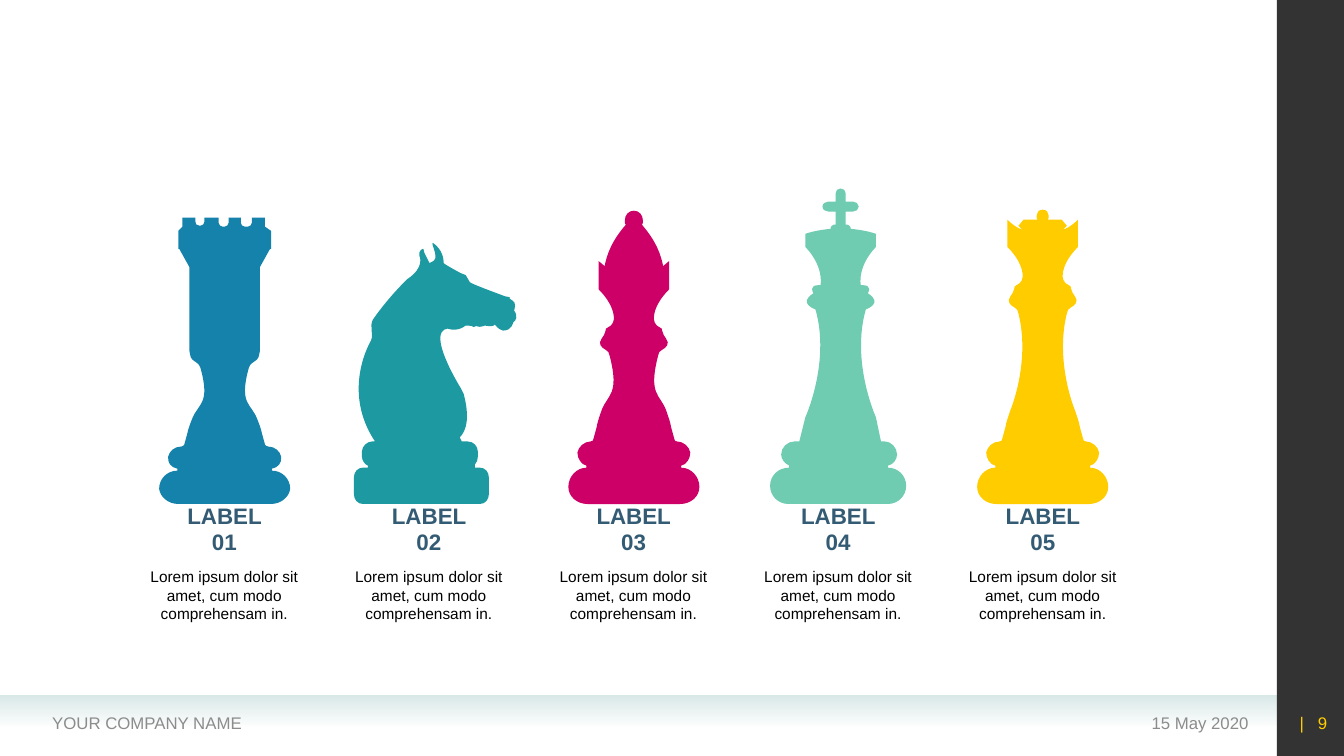
import lxml.etree
import pptx
import pptx.dml.color
import pptx.enum.shapes
import pptx.enum.text
import pptx.util

Pt = pptx.util.Pt
ALIGN = pptx.enum.text.PP_ALIGN
ANCHOR = pptx.enum.text.MSO_ANCHOR
RECT = pptx.enum.shapes.MSO_SHAPE.RECTANGLE
NS = "{http://schemas.openxmlformats.org/drawingml/2006/main}"
UNIT = 0.72  # points per step of the outlines below

# Outlines hold (distance from axis, height above base): a pair is a corner,
# six numbers are a cubic curve. Half outlines run from the top to the base.
FOOT = [(34, 87, 36, 82, 37, 76), (40, 65), (40, 63, 41, 62, 43, 62),
        (49, 62, 55, 57, 56, 51), (56, 45, 52, 39, 47, 38), (47, 36),
        (57, 36, 65, 27, 65, 17), (65, 7, 56, 0, 46, 0)]
COLLAR = [(35, 213), (25, 203, 21, 194, 20, 187), (19, 182, 21, 177, 26, 175),
          (28, 175, 28, 173, 28, 172), (29, 169, 30, 166, 32, 164),
          (36, 159, 32, 155, 28, 153), (26, 152, 24, 150, 24, 147)]
BISHOP = [(0, 291), (5, 291, 9, 287, 9, 281), (9, 279, 9, 278, 8, 277),
          (22, 261, 27, 247, 29, 236), (31, 238, 33, 239, 35, 241),
          *COLLAR, (14, 108, 26, 109, 32, 93), *FOOT]
RAISED = [tuple(v + 42 * (i % 2) for i, v in enumerate(part)) for part in COLLAR]
QUEEN = [(0, 292), (4, 292, 6, 289, 6, 286), (6, 284, 6, 283, 5, 282),
         (19, 282), (24, 276), (19, 271), (20, 272), (26, 274, 31, 278, 35, 282),
         *RAISED, (14, 149, 26, 108, 32, 93), *FOOT]
CROSS = [(0, 313), (3, 313, 5, 311, 5, 308), (5, 300), (12, 300),
         (15, 300, 18, 298, 18, 295), (18, 292, 15, 290, 12, 290), (5, 290),
         (5, 277), (7, 277), (8, 277, 10, 275, 10, 274), (10, 273),
         (18, 272, 26, 271, 35, 268), (35, 255), (16, 235, 20, 217, 20, 217),
         (33, 218, 27, 209, 27, 209), (43, 199, 25, 193, 25, 193),
         (10, 141, 35, 86, 35, 86)]
KING_R = CROSS + [(40, 62), (44, 62), (50, 62, 56, 56, 56, 49),
                  (56, 44, 52, 39, 47, 38), (47, 36),
                  (57, 36, 65, 28, 65, 18), (65, 8, 57, 0, 47, 0)]
KING_L = CROSS + [(41, 62), (46, 62), (53, 62, 59, 56, 59, 49),
                  (59, 44, 55, 40, 51, 38), (51, 36),
                  (62, 36, 70, 28, 70, 18), (70, 8, 62, 0, 52, 0)]
TOWER = [(46, 271), (46, 253), (45, 253), (35, 235), (35, 152),
         (35, 150, 35, 149, 34, 147), (34, 145, 31, 142, 29, 141),
         (26, 139, 24, 137, 24, 135), (14, 99, 26, 100, 32, 85),
         (34, 80, 36, 75, 37, 70), (40, 59), (40, 58, 42, 57, 43, 57),
         (50, 57, 55, 52, 56, 47), (57, 41, 53, 36, 47, 35), (47, 33),
         (57, 33, 65, 25, 65, 15), (64, 7, 56, 0, 46, 0)]
ROOK_R = [(0, 275), (2, 275, 4, 277, 4, 279), (4, 284), (16, 284), (16, 279),
          (16, 277, 18, 275, 20, 275), (23, 275), (25, 275, 27, 277, 27, 279),
          (27, 284), (40, 284), (40, 275), *TOWER]
ROOK_L = [(0, 275), (2, 275), (4, 275, 6, 277, 6, 279), (6, 284), (20, 284),
          (20, 280), (20, 278, 22, 276, 24, 276), (25, 276),
          (28, 276, 29, 278, 29, 280), (29, 284), (42, 284), (42, 275), *TOWER]
KNIGHT = [(-65, 36), (-60, 36), (-60, 38), (-63, 39, -66, 43, -66, 47), (-66, 52),
          (-66, 57, -61, 62, -56, 62), (-53, 62), (-87, 113, -57, 162, -57, 162),
          (-54, 169, -59, 176, -55, 183), (-39, 206, -21, 223, -21, 223),
          (-3, 235, -9, 246, -9, 246), (-10, 253, -5, 253, -5, 253),
          (-4, 249), (1, 239), (5, 241), (12, 245, -2, 265, 7, 257),
          (16, 249, 15, 239, 15, 239), (17, 237, 32, 229, 32, 229),
          (37, 227), (41, 220), (43, 218, 76, 206, 76, 206), (81, 205),
          (81, 205, 78, 205, 83, 202), (88, 200, 85, 192, 85, 192),
          (89, 186, 87, 182, 84, 180), (84, 180, 83, 172, 74, 172),
          (69, 173, 66, 178, 66, 178), (65, 175, 56, 177, 56, 177),
          (56, 177, 51, 175, 49, 176), (47, 178, 45, 174, 44, 176),
          (43, 177, 37, 177, 37, 177), (28, 170, 19, 174, 19, 174),
          (-3, 171, 32, 115, 32, 115), (35, 109), (41, 86, 38, 73, 31, 66),
          (33, 62), (39, 62), (45, 62, 49, 57, 49, 52), (49, 47),
          (49, 44, 48, 41, 46, 39), (46, 36), (51, 36), (56, 36, 60, 32, 60, 26),
          (60, 10), (60, 4, 56, 0, 51, 0), (-65, 0), (-70, 0, -74, 4, -74, 10),
          (-74, 26), (-74, 32, -70, 36, -65, 36)]


def tint(code):
    return pptx.dml.color.RGBColor.from_string(code)


def fade(color, share):
    """Add an opacity in percent to a colour element."""
    lxml.etree.SubElement(color, NS + "alpha", val=str(share * 1000))


def join(right, left):
    """Close two half outlines around their axis, the left one run backwards."""
    flip = [tuple(-v if i % 2 == 0 else v for i, v in enumerate(part)) for part in left]
    back = [part[2:4] + part[:2] + prior[-2:] if len(part) == 6 else prior[-2:]
            for prior, part in zip(flip, flip[1:])]
    return right + [flip[-1][-2:]] + back[::-1]


def piece(slide, axis, base, outline, color):
    """Draw an outline, bending each side that has two control points."""
    def spot(x, y):
        return Pt(axis + x * UNIT), Pt(base - y * UNIT)

    ends = [spot(*part[-2:]) for part in outline]
    maker = slide.shapes.build_freeform(*ends[0], scale=1.0)
    maker.add_line_segments(ends[1:], close=True)
    shape = maker.convert_to_shape()
    sides = list(shape._element.spPr.iter(NS + "lnTo"))
    for side, part in zip(sides, outline[1:]):
        if len(part) == 6:
            side.tag = NS + "cubicBezTo"
            for n in (0, 1):
                x, y = spot(*part[2 * n:2 * n + 2])
                dot = lxml.etree.Element(NS + "pt", x=str(x - shape.left), y=str(y - shape.top))
                side.insert(n, dot)
    shape.shadow.inherit = False
    shape.fill.solid()
    shape.fill.fore_color.rgb = tint(color)
    shape.line.fill.background()


def label(slide, box, runs, size, color, align=ALIGN.LEFT, anchor=ANCHOR.MIDDLE,
          bold=False, inset=(7.2, 3.6)):
    area = slide.shapes.add_textbox(*map(Pt, box))
    frame = area.text_frame
    frame.word_wrap = True
    frame.vertical_anchor = anchor
    frame.margin_left = frame.margin_right = Pt(inset[0])
    frame.margin_top = frame.margin_bottom = Pt(inset[1])
    line = frame.paragraphs[0]
    line.alignment = align
    for text, gap in runs:
        run = line.add_run()
        run.text = text
        run.font.name, run.font.size, run.font.bold = "Arial", Pt(size), bold
        run.font.color.rgb = tint(color)
        if gap:
            run._r.get_or_add_rPr().set("spc", str(gap))


def panel(slide, box):
    shape = slide.shapes.add_shape(RECT, *map(Pt, box))
    shape.shadow.inherit = False
    shape.line.fill.background()
    return shape


def frame(slide, wide, high):
    """Draw the footer band, the side bar and their texts."""
    side = wide - 48
    band = panel(slide, (0, 496.8, side, 22.3))
    band.fill.gradient()
    band.fill.gradient_angle = 270
    for stop in band.fill.gradient_stops:
        stop.color.rgb = tint("D9E9E8")
    fade(list(band._element.spPr.iter(NS + "srgbClr"))[-1], 0)
    bar = panel(slide, (side, 0, 48, high))
    bar.fill.solid()
    bar.fill.fore_color.rgb = tint("000000")
    fade(next(bar._element.spPr.iter(NS + "srgbClr")), 80)
    top, tall = high - 38.2, 28.8
    label(slide, (side - 257, top, 244, tall), [("15 May 2020", 0)], 12, "8C8C8C", ALIGN.RIGHT)
    label(slide, (30.2, top, 353, tall), [("YOUR COMPANY NAME", 0)], 12, "8C8C8C")
    label(slide, (side - 5, top, 48, tall), [("| ", 330), ("9", 0)], 12, "FFCC00", ALIGN.RIGHT)


def column(slide, left, base, wide, number, outline, shift, color):
    mid = left + wide / 2
    piece(slide, mid + shift, base, outline, color)
    label(slide, (mid - 41, base + 13.7, 82, 26.6), [(f"LABEL {number:02}", 0)], 16,
          "335B74", ALIGN.CENTER, ANCHOR.BOTTOM, True)
    label(slide, (left, base + 44, wide, 43.2),
          [("Lorem ipsum dolor sit amet, cum modo comprehensam in.", 0)], 11,
          "000000", ALIGN.CENTER, ANCHOR.TOP, inset=(2.9, 1.4))


def main():
    deck = pptx.Presentation()
    deck.slide_width, deck.slide_height = Pt(960), Pt(540)
    slide = deck.slides.add_slide(deck.slide_layouts[6])
    frame(slide, 960, 540)
    chess = [(join(ROOK_R, ROOK_L), 0.3, "1482AB"),
             (KNIGHT, -0.3, "1D9AA1"),
             (join(BISHOP, BISHOP), 0.3, "CC0066"),
             (join(KING_R, KING_L), 1.8, "70CCB1"),
             (join(QUEEN, QUEEN), 0, "FFCC00")]
    for n, (outline, shift, color) in enumerate(chess):
        column(slide, 100.2 + n * 146.15, 360, 120, n + 1, outline, shift, color)
    deck.save("out.pptx")


if __name__ == "__main__":
    main()
